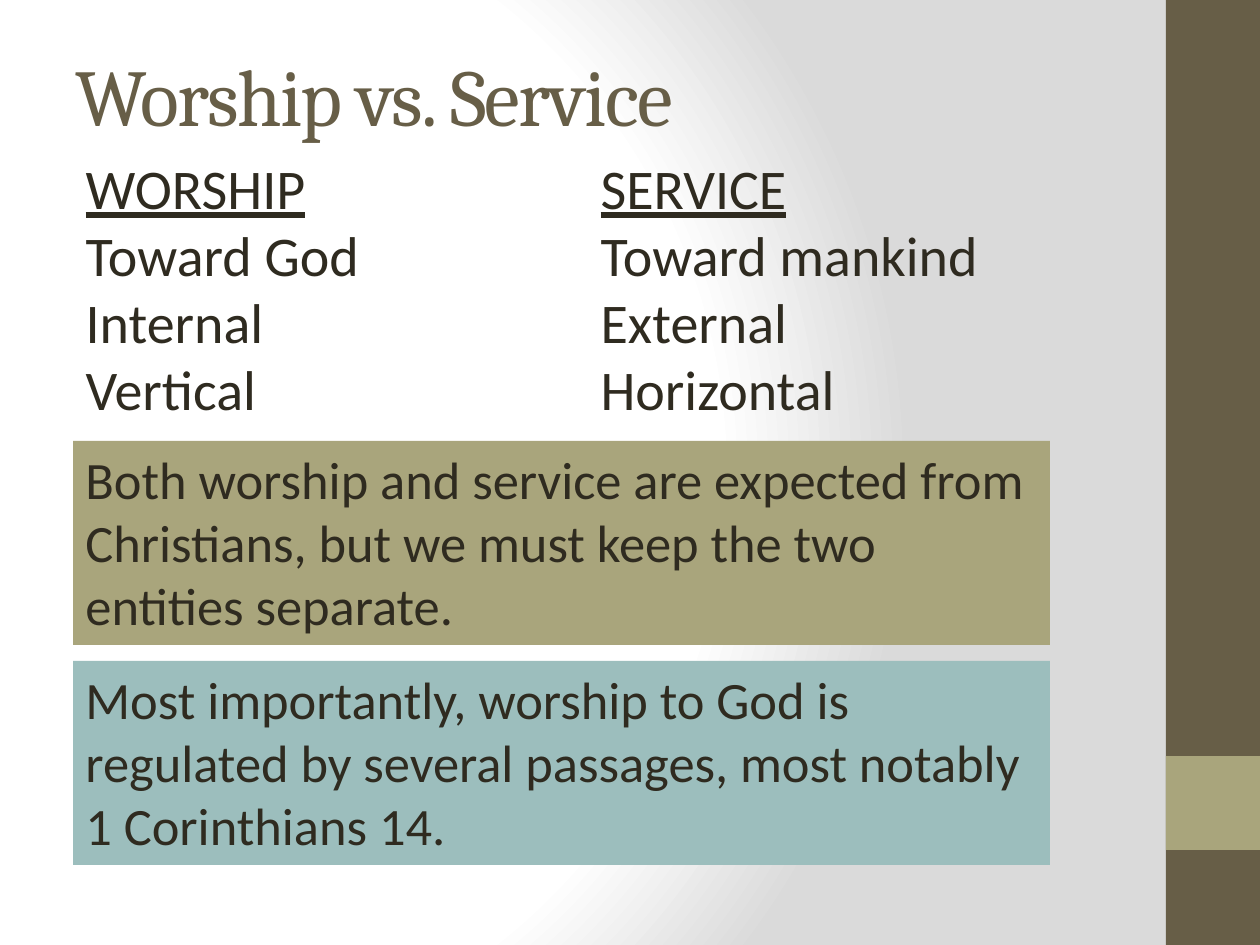
from dataclasses import dataclass

from lxml.etree import SubElement
from pptx import Presentation
from pptx.dml.color import RGBColor
from pptx.enum.shapes import MSO_SHAPE as Shape
from pptx.enum.text import MSO_ANCHOR as Anchor, MSO_AUTO_SIZE as AutoSize, PP_ALIGN as Align
from pptx.oxml import parse_xml
from pptx.oxml.ns import nsdecls, qn
from pptx.util import Pt

PX = 914400 / 126  # EMU in one px
WIDTH, HEIGHT = 1260, 945

BROWN = RGBColor(0x67, 0x5E, 0x47)
OLIVE = RGBColor(0xA9, 0xA5, 0x7C)
TEAL = RGBColor(0x9C, 0xBE, 0xBD)
INK = RGBColor(0x2F, 0x2B, 0x20)

TITLE_FONT = {"name": "Cambria", "size": Pt(46)}
LIST_FONT = {"name": "Calibri", "size": Pt(32)}
NOTE_FONT = {"name": "Calibri", "size": Pt(30)}


@dataclass(frozen=True)
class Box:
    left: int
    top: int
    width: int
    height: int


@dataclass(frozen=True)
class Column:
    left: int
    heading: str
    items: tuple[str, ...]


@dataclass(frozen=True)
class Panel:
    box: Box
    fill: RGBColor
    text: str = ""


COLUMNS = (
    Column(73, "WORSHIP", ("Toward God", "Internal", "Vertical")),
    Column(588, "SERVICE", ("Toward mankind", "External", "Horizontal")),
)
PANELS = (
    # Sidebar
    Panel(Box(1166, 0, 94, HEIGHT), BROWN),
    Panel(Box(1166, 756, 94, 94), OLIVE),
    # Notes
    Panel(Box(73, 441, 977, 204), OLIVE,
          "Both worship and service are expected from Christians, "
          "but we must keep the two entities separate."),
    Panel(Box(73, 661, 977, 204), TEAL,
          "Most importantly, worship to God is regulated by several passages, "
          "most notably 1 Corinthians 14."),
)


def emu(pixels: int) -> int:
    return round(pixels * PX)


def place(shape, box: Box) -> None:
    for side in ("left", "top", "width", "height"):
        setattr(shape, side, emu(getattr(box, side)))


def prepare_frame(shape, anchor: Anchor):
    frame = shape.text_frame
    values = {"word_wrap": True, "auto_size": AutoSize.NONE, "vertical_anchor": anchor}
    for name, value in values.items():
        setattr(frame, name, value)
    return frame


def write(paragraph, text: str, font: dict, color: RGBColor, underline: bool = False):
    paragraph.alignment = Align.LEFT
    run = paragraph.add_run()
    run.text = text
    for name, value in {**font, "underline": underline}.items():
        setattr(run.font, name, value)
    run.font.color.rgb = color
    return run


def paint_background(slide) -> None:
    stops = "".join(
        f'<a:gs pos="{position * 1000}"><a:srgbClr val="{color}"/></a:gs>'
        for position, color in ((0, "FFFFFF"), (75, "FFFFFF"), (100, "DADADA")))
    slide.element.cSld.insert(0, parse_xml(
        f'<p:bg {nsdecls("p", "a")}><p:bgPr><a:gradFill rotWithShape="1">'
        f'<a:gsLst>{stops}</a:gsLst><a:path path="circle">'
        '<a:fillToRect l="20000" t="50000" r="100000" b="50000"/></a:path>'
        '</a:gradFill><a:effectLst/></p:bgPr></p:bg>'))


def draw_panel(slide, panel: Panel) -> None:
    shape = slide.shapes.add_shape(Shape.RECTANGLE, 0, 0, 0, 0)
    place(shape, panel.box)
    shape.shadow.inherit = False
    shape.fill.solid()
    shape.fill.fore_color.rgb = panel.fill
    shape.line.fill.background()
    if panel.text:
        frame = prepare_frame(shape, Anchor.TOP)
        write(frame.paragraphs[0], panel.text, NOTE_FONT, INK)


def fill_title(shape, text: str) -> None:
    place(shape, Box(63, 10, 1050, 168))
    frame = prepare_frame(shape, Anchor.MIDDLE)
    run = write(frame.paragraphs[0], text, TITLE_FONT, BROWN)
    run.font._element.set("spc", "-100")


def fill_column(shape, column: Column) -> None:
    place(shape, Box(column.left, 147, 514, 323))
    frame = prepare_frame(shape, Anchor.TOP)
    for index, text in enumerate((column.heading, *column.items)):
        paragraph = frame.add_paragraph() if index else frame.paragraphs[0]
        paragraph.space_before = Pt(0)
        write(paragraph, text, LIST_FONT, INK, underline=index == 0)
        # Plain lines without bullet or indent
        properties = paragraph._p.get_or_add_pPr()
        properties.set("marL", "0")
        properties.set("indent", "0")
        SubElement(properties, qn("a:buNone"))


def main() -> None:
    presentation = Presentation()
    presentation.slide_width, presentation.slide_height = emu(WIDTH), emu(HEIGHT)
    two_content = presentation.slide_layouts[3]
    slide = presentation.slides.add_slide(two_content)

    paint_background(slide)
    fill_title(slide.shapes.title, "Worship vs. Service")
    for index, column in enumerate(COLUMNS, start=1):
        fill_column(slide.placeholders[index], column)
    for panel in PANELS:
        draw_panel(slide, panel)

    presentation.save("out.pptx")


if __name__ == "__main__":
    main()
